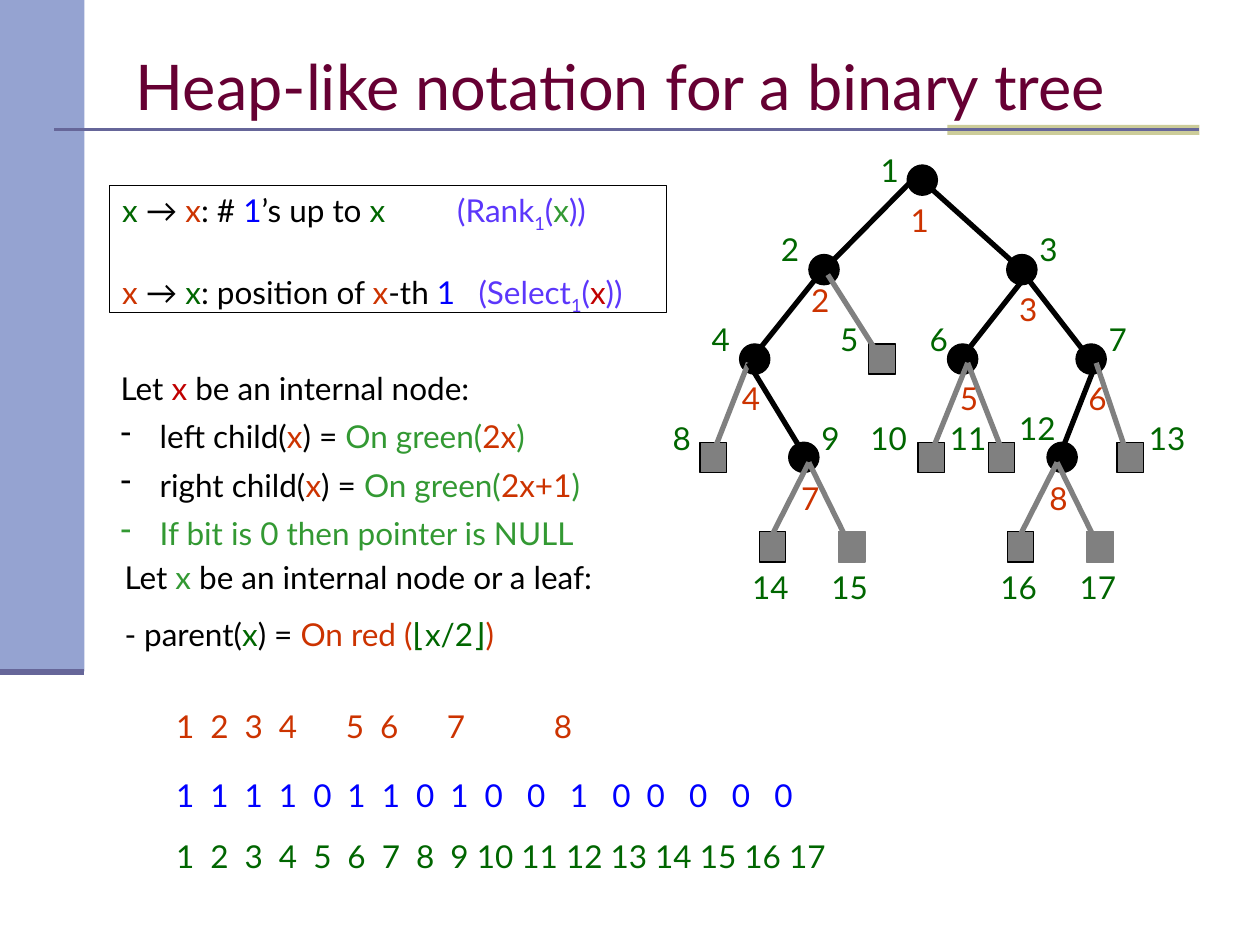
import itertools
import pptx
import pptx.dml.color
import pptx.enum.shapes
import pptx.enum.text
import pptx.oxml
import pptx.oxml.ns
import pptx.util

KIND = pptx.enum.shapes.MSO_SHAPE
ANCHOR = pptx.enum.text.MSO_ANCHOR
BLACK, GRAY, SLATE = "000000", "808080", "666699"
GREEN, LEAF, RED, DARK = "006600", "339933", "CC3300", "C00000"
BLUE, VIOLET = "0000FF", "5C37FB"


def tint(code):
    return pptx.dml.color.RGBColor.from_string(code)


def child(parent, tag, **attrs):
    node = pptx.oxml.parse_xml(f"<a:{tag} {pptx.oxml.ns.nsdecls('a')}/>")
    for key, value in attrs.items():
        node.set(key, str(value))
    parent.append(node)
    return node


class Board:
    font = "Lato"
    size = 18
    cols, rows = 100, 75

    def __init__(self, deck):
        self.deck = deck
        self.slide = deck.slides.add_slide(deck.slide_layouts[6])

    def x(self, col):
        return round(self.deck.slide_width * col / self.cols)

    def y(self, row):
        return round(self.deck.slide_height * row / self.rows)

    def frame(self, left, top, width, height):
        return self.x(left), self.y(top), self.x(width), self.y(height)

    def shape(self, kind, box, fill=None, edge=None):
        item = self.slide.shapes.add_shape(kind, *self.frame(*box))
        item.shadow.inherit = False
        if fill:
            item.fill.solid()
            item.fill.fore_color.rgb = tint(fill)
        else:
            item.fill.background()
        if edge:
            item.line.color.rgb = tint(edge)
            item.line.width = pptx.util.Pt(0.75)
        else:
            item.line.fill.background()
        return item

    def line(self, ends, color, width):
        x1, y1, x2, y2 = ends
        item = self.slide.shapes.add_connector(
            pptx.enum.shapes.MSO_CONNECTOR.STRAIGHT,
            self.x(x1), self.y(y1), self.x(x2), self.y(y2))
        item.line.color.rgb = tint(color)
        item.line.width = pptx.util.Pt(width)
        child(item._element.spPr, "effectLst")

    def text(self, box, *lines, size=None, anchor=ANCHOR.TOP):
        item = self.slide.shapes.add_textbox(*self.frame(*box))
        item.text_frame.word_wrap = True
        item.text_frame.vertical_anchor = anchor
        return self.fill(item.text_frame, lines, size or self.size)

    def fill(self, body, lines, size):
        body.text = "\n".join("" for _ in lines)
        for para, parts in zip(body.paragraphs, lines):
            para.alignment = pptx.enum.text.PP_ALIGN.LEFT
            for words, color, *sub in parts:
                run = para.add_run()
                run.text = words
                run.font.name = self.font
                run.font.size = pptx.util.Pt(size)
                run.font.color.rgb = tint(color)
                if sub:
                    run.font._element.set("baseline", "-25000")
        return body.paragraphs

    def tabs(self, para, stops):
        group = child(para._p.get_or_add_pPr(), "tabLst")
        for stop in stops:
            child(group, "tab", pos=self.x(stop), algn="l")

    def bullet(self, para, indent):
        props = para._p.get_or_add_pPr()
        props.set("marL", str(self.x(indent)))
        props.set("indent", str(-self.x(indent)))
        child(props, "buChar", char="-")

    def series(self, top, items, color, gaps):
        para = self.text((13, top, 65, 4), [("\t".join(map(str, items)), color)])[0]
        self.tabs(para, itertools.accumulate(gaps))


LEVELS = [14.3, 21.4, 28.5, 36.3, 43.4]
NODES = [
    (73.2, 0, (68.9, 11.5), (71.3, 15.5), None),
    (65.4, 1, (61, 17.8), (63.4, 21.8), (72.8, 13.9, 65, 21.8)),
    (81.1, 1, (81.5, 17.8), (79.9, 22.5), (73.6, 14.7, 81.5, 21.8)),
    (59.9, 2, (55.5, 24.9), (57.9, 29.6), (65, 21.8, 59.4, 28.8)),
    (70, 2, (65.7, 24.9), None, (65.7, 21.8, 69.7, 28.1)),
    (76.4, 2, (72.8, 24.9), (75.2, 29.6), (81.5, 21.8, 76, 28.8)),
    (86.6, 2, (87, 24.9), (85.4, 29.6), (80.7, 21, 86.2, 28.1)),
    (56.6, 3, (52.4, 32.8), None, (59.4, 28.8, 56.3, 36.7)),
    (63.8, 3, (64.2, 32.8), (62.6, 37.5), (59.4, 28.8, 64.2, 36.7)),
    (73.9, 3, (68.1, 32.8), None, (76.8, 28.8, 73.6, 36.7)),
    (79.5, 3, (74.4, 32.8), None, (76.8, 28.8, 79.9, 36.7)),
    (84.3, 3, (79.9, 32), (82.3, 37.5), (87, 28.8, 83.9, 36.7)),
    (89.7, 3, (90.2, 32.8), None, (87, 28.8, 89.4, 35.9)),
    (61.3, 4, (58.7, 44.6), None, (64.2, 36.7, 61, 43)),
    (67.6, 4, (65, 44.6), None, (64.2, 36.7, 67.3, 43)),
    (81, 4, (78.4, 44.6), None, (83.9, 36.7, 80.7, 43)),
    (87.3, 4, (84.7, 44.6), None, (83.9, 36.7, 87, 43)),
]


def tree(board):
    for number, (mid, level, _, inner, _) in enumerate(NODES, 1):
        kind, wide, fill = (KIND.OVAL, 2.4, BLACK) if inner else (KIND.RECTANGLE, 2.1, GRAY)
        edge = GRAY if number in (15, 17) else BLACK
        board.shape(kind, (mid - wide / 2, LEVELS[level] - 1.2, wide, 2.4), fill, edge)
    for _, _, _, inner, ends in NODES:
        if ends:
            board.line(ends, BLACK if inner else GRAY, 3)
    rank = itertools.count(1)
    for number, (_, _, spot, inner, _) in enumerate(NODES, 1):
        board.text((*spot, 5.2 if number > 9 else 3.6, 4), [(str(number), GREEN)])
        if inner:
            board.text((*inner, 3.6, 4), [(str(next(rank)), RED)])


def rules(board):
    box = board.shape(KIND.RECTANGLE, (8.7, 14.7, 44.2, 10.1), edge=BLACK)
    box.text_frame.word_wrap = True
    box.text_frame.vertical_anchor = ANCHOR.TOP
    ranks, picks = board.fill(box.text_frame, [
        [("x ", GREEN), ("→ ", BLACK), ("x", RED), (": # ", BLACK), ("1", BLUE),
         ("’s up to ", BLACK), ("x\t", GREEN), ("(Rank", VIOLET), ("1", VIOLET, True),
         ("(", VIOLET), ("x", LEAF), ("))", VIOLET)],
        [("x ", RED), ("→ ", BLACK), ("x", GREEN), (": position of ", BLACK), ("x", RED),
         ("-th ", BLACK), ("1\t", BLUE), ("(Select", VIOLET), ("1", VIOLET, True),
         ("(", VIOLET), ("x", DARK), ("))", VIOLET)]], board.size)
    ranks.space_after = pptx.util.Pt(22)
    board.tabs(ranks, [26.6])
    board.tabs(picks, [28.3])

    def kid(side, value):
        return [(side + " child(", BLACK), ("x", RED), (") = ", BLACK),
                ("On green(", LEAF), (value, RED), (")", LEAF)]

    paras = board.text(
        (8.6, 28.8, 42, 15.7),
        [("Let ", BLACK), ("x", DARK), (" be an internal node:", BLACK)],
        kid("left", "2x"), kid("right", "2x+1"),
        [("If bit is 0 then pointer is NULL", LEAF)])
    for para in paras:
        para.space_before = pptx.util.Pt(6)
    for para in paras[1:]:
        board.bullet(para, 3.1)
    paras = board.text(
        (8.9, 43.8, 42, 8.6),
        [("Let ", BLACK), ("x", LEAF), (" be an internal node or a leaf:", BLACK)],
        [("- parent(", BLACK), ("x", GREEN), (") = ", BLACK), ("On red (", RED),
         ("⌊x/2⌋", GREEN), (")", RED)])
    paras[1].line_spacing = 1.5


def main():
    deck = pptx.Presentation()
    deck.slide_width = pptx.util.Inches(10)
    deck.slide_height = pptx.util.Inches(7.5)
    board = Board(deck)
    board.shape(KIND.RECTANGLE, (0, 0, 6.7, 53.3), "95A3D1")
    board.shape(KIND.RECTANGLE, (75.2, 9.9, 20, 0.8), "CCCC99")
    board.line((4.3, 10.3, 95.2, 10.3), SLATE, 1.5)
    board.line((0, 53.3, 6.7, 53.3), SLATE, 3.5)
    board.text((9.8, 2.8, 85, 7.9), [("Heap-like notation for a binary tree", "660033")],
               size=36, anchor=ANCHOR.MIDDLE)
    tree(board)
    step, wide = 2.72, 3.38
    board.series(55.6, range(1, 9), RED, [step] * 3 + [5.3, step, 5.3, 8.5])
    board.series(61.1, "11110110100100000", BLUE,
                 [step] * 9 + [wide] * 3 + [step] + [wide] * 3)
    board.series(65.9, range(1, 18), GREEN, [step] * 8 + [2.1] + [3.54] * 7)
    rules(board)
    deck.save("out.pptx")


if __name__ == "__main__":
    main()
